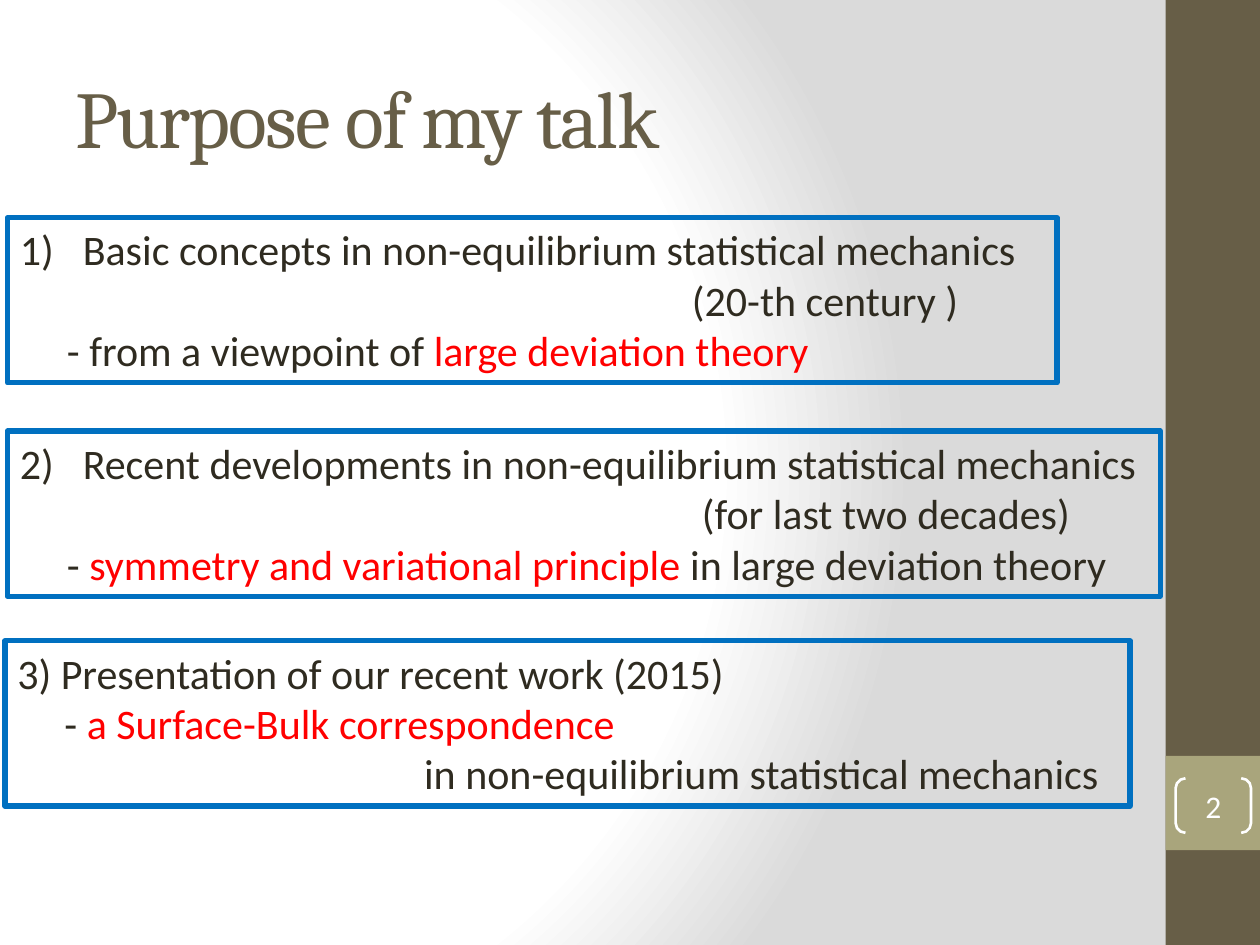
from pptx import Presentation
from pptx.dml.color import RGBColor
from pptx.enum.shapes import MSO_SHAPE
from pptx.enum.text import MSO_ANCHOR, PP_ALIGN
from pptx.oxml import parse_xml
from pptx.oxml.ns import nsdecls, qn
from pptx.util import Cm, Pt

BROWN = RGBColor(0x67, 0x5E, 0x47)
OLIVE = RGBColor(0xA9, 0xA5, 0x7C)
WHITE = RGBColor(0xFF, 0xFF, 0xFF)
BLUE = RGBColor(0x00, 0x70, 0xC0)
INK = RGBColor(0x2F, 0x2B, 0x20)
RED = RGBColor(0xFF, 0x00, 0x00)
GREY = RGBColor(0xDA, 0xDA, 0xDA)

HANG = 1.27  # hanging indent of a numbered line, cm
DASH = 0.95  # indent of a dashed line, cm


def add_run(para, text, size, color, font="Calibri"):
    run = para.add_run()
    run.text = text
    run.font.size = Pt(size)
    run.font.name = font
    run.font.color.rgb = color
    return run


def add_block(slide, kind, box, fill=None):
    shape = slide.shapes.add_shape(kind, *map(Cm, box))
    shape.shadow.inherit = False
    if fill is None:
        shape.fill.background()
    else:
        shape.fill.solid()
        shape.fill.fore_color.rgb = fill
    shape.line.fill.background()
    return shape


def draw_ground(slide):
    """Round gradient, white at the left and grey at the right."""
    slide.background.fill.gradient()
    grad = slide.element.find(".//" + qn("a:gradFill"))
    stops = "".join(
        f'<a:gs pos="{pos * 1000}"><a:srgbClr val="{color}"/></a:gs>'
        for pos, color in ((0, WHITE), (75, WHITE), (100, GREY)))
    grad.getparent().replace(grad, parse_xml(
        f'<a:gradFill {nsdecls("a")} rotWithShape="1"><a:gsLst>{stops}</a:gsLst>'
        '<a:path path="circle"><a:fillToRect l="20000" t="50000" r="100000" '
        'b="50000"/></a:path></a:gradFill>'))


def draw_side(slide, box, number):
    """Side band with the slide number in brackets on a square."""
    left, top, width, height = box
    add_block(slide, MSO_SHAPE.RECTANGLE, box, BROWN)
    square = top + 0.8 * height
    add_block(slide, MSO_SHAPE.RECTANGLE, (left, square, width, width), OLIVE)
    label = add_block(slide, MSO_SHAPE.DOUBLE_BRACKET,
                      (left + 0.2, square + 0.45, 1.52, 1.1))
    label.adjustments[0] = 0.18
    label.line.color.rgb = WHITE
    label.line.width = Pt(1.5)
    frame = label.text_frame
    frame.margin_left = frame.margin_right = 0
    frame.margin_top = frame.margin_bottom = 0
    frame.vertical_anchor = MSO_ANCHOR.MIDDLE
    para = frame.paragraphs[0]
    para.alignment = PP_ALIGN.CENTER
    add_run(para, number, 18, WHITE)


def draw_title(slide, box, text):
    frame = slide.shapes.add_textbox(*map(Cm, box)).text_frame
    frame.word_wrap = True
    frame.vertical_anchor = MSO_ANCHOR.MIDDLE
    run = add_run(frame.paragraphs[0], text, 46, BROWN, "Cambria")
    run.font._element.set("spc", "-100")


def draw_topic(slide, box, lines, start=None):
    """Framed topic; each line is an indent and its coloured runs."""
    shape = slide.shapes.add_textbox(*map(Cm, box))
    shape.line.color.rgb = BLUE
    shape.line.width = Pt(3)
    frame = shape.text_frame
    frame.word_wrap = True
    for i, (indent, runs) in enumerate(lines):
        para = frame.add_paragraph() if i else frame.paragraphs[0]
        props = para._p.get_or_add_pPr()
        props.set("marL", str(Cm(indent)))
        if start and i == 0:  # automatic number
            props.set("indent", str(-Cm(indent)))
            props.append(parse_xml(
                f'<a:buAutoNum {nsdecls("a")} type="arabicParenR" '
                f'startAt="{start}"/>'))
        for text, color in runs:
            add_run(para, text, 24, color)


def main():
    deck = Presentation()
    deck.slide_width, deck.slide_height = Cm(25.4), Cm(19.05)
    slide = deck.slides.add_slide(deck.slide_layouts[6])
    draw_ground(slide)
    draw_side(slide, (23.5, 0, 1.9, 19.05), "2")
    draw_title(slide, (1.27, 0.76, 21.16, 3.18), "Purpose of my talk")

    # Topics
    draw_topic(slide, (0.15, 4.39, 21.16, 3.33), [
        (HANG, [("Basic concepts in non-equilibrium statistical mechanics", INK)]),
        (13.55, [("(20-th century )", INK)]),
        (DASH, [("- from a viewpoint of ", INK),
                ("large deviation theory", RED)]),
    ], start=1)
    draw_topic(slide, (0.15, 8.69, 23.24, 3.33), [
        (HANG, [("Recent developments in non-equilibrium statistical mechanics",
                 INK)]),
        (13.75, [("(for last two decades)", INK)]),
        (DASH, [("- ", INK), ("symmetry and variational principle ", RED),
                ("in large deviation theory", INK)]),
    ], start=2)
    draw_topic(slide, (0.1, 12.92, 22.68, 3.33), [
        (0, [("3) Presentation of our recent work (2015)", INK)]),
        (DASH, [("- ", INK), ("a Surface-Bulk correspondence", RED)]),
        (8.2, [("in non-equilibrium statistical mechanics", INK)]),
    ])
    deck.save("out.pptx")


if __name__ == "__main__":
    main()
